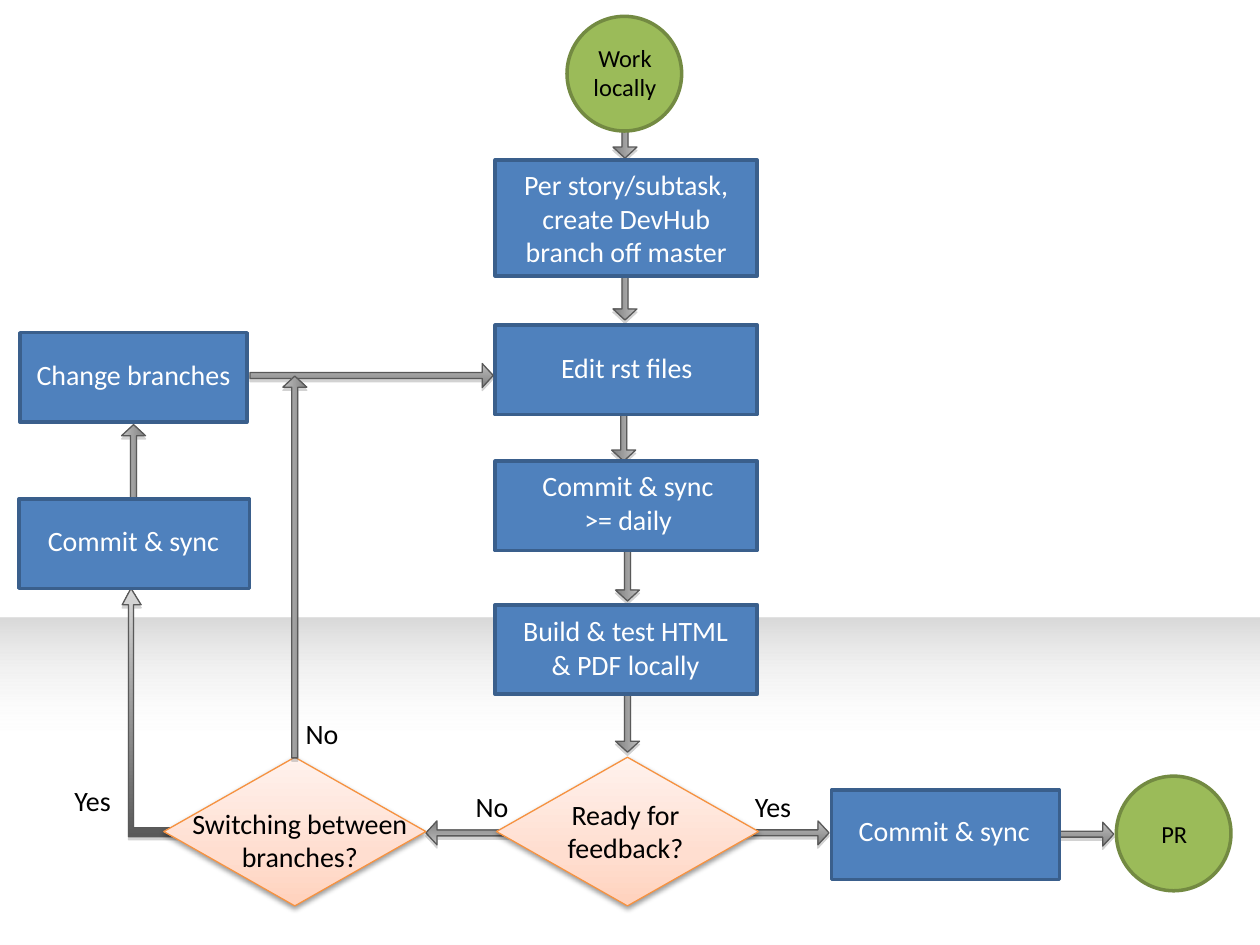
from lxml import etree
from pptx import Presentation
from pptx.dml.color import RGBColor
from pptx.enum.shapes import MSO_SHAPE
from pptx.enum.text import MSO_AUTO_SIZE, PP_ALIGN
from pptx.oxml.ns import qn
from pptx.util import Inches, Pt

RECT, OVAL = MSO_SHAPE.RECTANGLE, MSO_SHAPE.OVAL
DIAMOND, ARROW = MSO_SHAPE.DIAMOND, MSO_SHAPE.RIGHT_ARROW
CENTER, GROW = PP_ALIGN.CENTER, MSO_AUTO_SIZE.SHAPE_TO_FIT_TEXT

BLACK = RGBColor(0x00, 0x00, 0x00)
WHITE = RGBColor(0xFF, 0xFF, 0xFF)
BLUE, BLUE_EDGE = RGBColor(0x4F, 0x81, 0xBD), RGBColor(0x3A, 0x5F, 0x8C)
GREEN, GREEN_EDGE = RGBColor(0x9B, 0xBB, 0x59), RGBColor(0x73, 0x8A, 0x42)
ORANGE, GRAY_EDGE = RGBColor(0xF6, 0x92, 0x40), RGBColor(0x59, 0x59, 0x59)
SHADOW_GRAY = RGBColor(0x80, 0x80, 0x80)
LIGHT_GRAY = RGBColor(0xD9, 0xD9, 0xD9)
ARROW_STOPS = [(0, RGBColor(0xBF, 0xBF, 0xBF), 100), (100, RGBColor(0x7F, 0x7F, 0x7F), 100)]
BENT_STOPS = [(0, GRAY_EDGE, 100), (100, LIGHT_GRAY, 100)]
FLOOR_STOPS = [(61, WHITE, 0), (100, LIGHT_GRAY, 100)]
DIAMOND_STOPS = [(0, RGBColor(0xFF, 0xD2, 0xBD), 100), (35, RGBColor(0xFF, 0xDE, 0xD0), 100),
                 (100, RGBColor(0xFF, 0xF2, 0xED), 100)]

MAIN_X, MAIN_W, BOX_H = 3.93, 2.08, 0.71
ARROW_H = 0.19
CIRCLE = 0.91


def add_color(parent, color, alpha):
    clr = etree.SubElement(parent, qn("a:srgbClr"), val=str(color))
    etree.SubElement(clr, qn("a:alpha"), val=str(alpha * 1000))


def set_gradient(sp, stops, angle):
    sp.fill.gradient()
    sp.fill.gradient_angle = 360 - angle
    gs_list = sp._element.spPr.find(qn("a:gradFill")).find(qn("a:gsLst"))
    for gs in list(gs_list):
        gs_list.remove(gs)
    for pos, color, alpha in stops:
        gs = etree.SubElement(gs_list, qn("a:gs"), pos=str(pos * 1000))
        add_color(gs, color, alpha)


def set_shadow(sp, color, alpha, blur, dist):
    effects = sp._element.spPr.find(qn("a:effectLst"))
    shadow = etree.SubElement(effects, qn("a:outerShdw"), blurRad=str(Pt(blur)),
                              dist=str(Pt(dist)), dir="5400000", rotWithShape="0")
    add_color(shadow, color, alpha)


def set_line(sp, color, width):
    sp.line.color.rgb = color
    sp.line.width = Pt(width)


def add_shape(s, kind, x, y, w, h):
    sp = s.shapes.add_shape(kind, Inches(x), Inches(y), Inches(w), Inches(h))
    sp.shadow.inherit = False
    return sp


def add_floor(s):
    sp = add_shape(s, RECT, 0, 4.9, 10, 2.6)
    set_gradient(sp, FLOOR_STOPS, 270)
    sp.line.fill.background()


def style_arrow(sp, stops, angle):
    set_gradient(sp, stops, angle)
    set_line(sp, GRAY_EDGE, 0.75)
    set_shadow(sp, SHADOW_GRAY, 35, 0, 1.8)


def add_arrow(s, cx, cy, length, rotation):
    sp = add_shape(s, ARROW, cx - length / 2, cy - ARROW_H / 2, length, ARROW_H)
    sp.rotation = rotation
    sp.adjustments[0], sp.adjustments[1] = 0.25, 0.46
    style_arrow(sp, ARROW_STOPS, 90)


def add_bent_arrow(s):
    points = [(1.64, 6.57), (1.06, 6.57), (1.06, 4.8), (1.12, 4.8), (1.04, 4.67),
              (0.97, 4.8), (1.02, 4.8), (1.02, 6.64), (1.64, 6.64)]
    start, *rest = [(Inches(x), Inches(y)) for x, y in points]
    builder = s.shapes.build_freeform(*start)
    builder.add_line_segments(rest, close=True)
    sp = builder.convert_to_shape()
    sp.shadow.inherit = False
    style_arrow(sp, BENT_STOPS, 270)


def add_node(s, kind, x, y, w, h, fill, edge):
    sp = add_shape(s, kind, x, y, w, h)
    sp.fill.solid()
    sp.fill.fore_color.rgb = fill
    set_line(sp, edge, 2)


def add_decision(s, x):
    sp = add_shape(s, DIAMOND, x, 6.01, MAIN_W, 1.18)
    set_gradient(sp, DIAMOND_STOPS, 270)
    set_line(sp, ORANGE, 0.75)
    set_shadow(sp, BLACK, 38, 3.1, 1.6)


def add_label(s, text, x, y, w, h, color=BLACK, size=16):
    tf = s.shapes.add_textbox(Inches(x), Inches(y), Inches(w), Inches(h)).text_frame
    tf.word_wrap = True
    tf.auto_size = GROW
    tf.text = text
    p = tf.paragraphs[0]
    p.alignment = CENTER
    font = p.runs[0].font
    font.name, font.size, font.color.rgb = "Calibri", Pt(size), color


def main():
    prs = Presentation()
    prs.slide_width, prs.slide_height = Inches(10), Inches(7.5)
    s = prs.slides.add_slide(prs.slide_layouts[6])

    add_floor(s)
    add_bent_arrow(s)
    for cx, cy, length, rotation in [
        (3.81, 6.61, 0.86, 180), (4.95, 3.32, 0.68, 90), (1.06, 3.71, 0.68, 270),
        (8.41, 6.62, 0.86, 0), (4.96, 2.2, 0.68, 90), (6.15, 6.61, 0.86, 0),
        (4.96, 1.03, 0.45, 90), (4.98, 4.43, 0.68, 90), (4.98, 5.63, 0.68, 90),
    ]:
        add_arrow(s, cx, cy, length, rotation)

    for x in (3.94, 1.3):
        add_decision(s, x)
    for x, y, w, h in [
        (MAIN_X, 1.27, MAIN_W, 0.92), (MAIN_X, 2.58, MAIN_W, BOX_H),
        (MAIN_X, 3.66, MAIN_W, BOX_H), (MAIN_X, 4.8, MAIN_W, BOX_H),
        (6.6, 6.27, 1.81, BOX_H), (0.15, 3.96, 1.83, BOX_H), (0.16, 2.64, 1.8, BOX_H),
    ]:
        add_node(s, RECT, x, y, w, h, BLUE, BLUE_EDGE)
    for x, y in [(4.5, 0.13), (8.86, 6.16)]:
        add_node(s, OVAL, x, y, CIRCLE, CIRCLE, GREEN, GREEN_EDGE)

    for text, x, y, w, h in [
        ("Per story/subtask, create DevHub branch off master", MAIN_X, 1.28, MAIN_W, 0.91),
        ("Edit rst files", 4.19, 2.73, 1.57, 0.37),
        ("Commit & sync >= daily", 4.2, 3.67, 1.57, 0.64),
        ("Build & test HTML & PDF locally", 4, 4.82, 1.93, 0.64),
        ("Commit & sync", 6.71, 6.41, 1.57, 0.37),
        ("Commit & sync", 0.16, 4.11, 1.8, 0.37),
        ("Change branches", 0.16, 2.79, 1.8, 0.37),
    ]:
        add_label(s, text, x, y, w, h, WHITE)
    for text, x, y, w, h in [
        ("Ready for feedback?", 4.18, 6.28, 1.57, 0.64),
        ("Switching between branches?", 1.38, 6.35, 2, 0.64),
        ("Yes", 5.87, 6.22, 0.53, 0.37), ("No", 3.64, 6.22, 0.53, 0.37),
        ("Yes", 0.47, 6.17, 0.53, 0.37), ("No", 2.25, 5.64, 0.61, 0.37),
    ]:
        add_label(s, text, x, y, w, h)
    add_label(s, "Work locally", 4.45, 0.29, 1.02, 0.57, size=14)
    add_label(s, "PR", 8.81, 6.45, 1.02, 0.34, size=14)

    add_arrow(s, 2.95, 2.98, 1.93, 0)
    add_arrow(s, 2.34, 4.5, 3.03, 270)
    prs.save("out.pptx")


if __name__ == "__main__":
    main()
